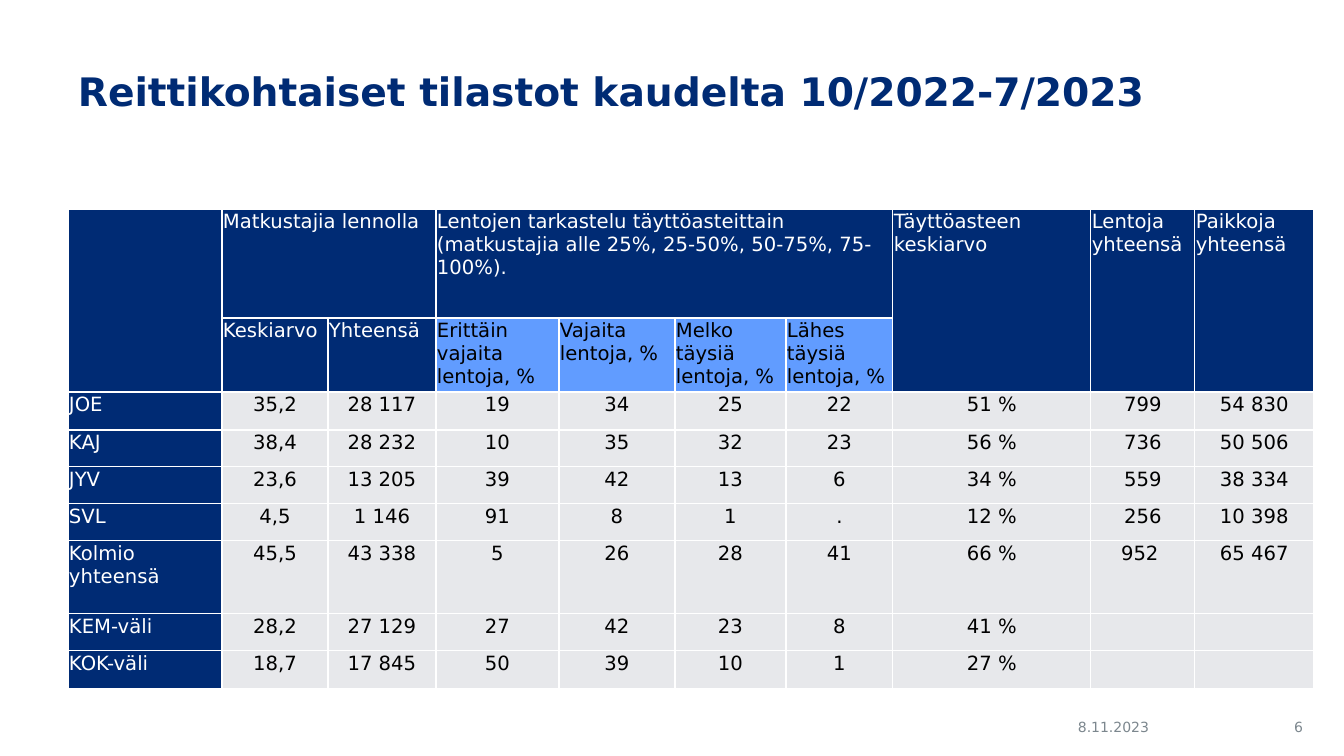
import dataclasses
import typing

import lxml.etree
import pptx
import pptx.dml.color
import pptx.enum.text
import pptx.oxml.ns
import pptx.util

ALIGN = pptx.enum.text.PP_ALIGN
ANCHOR = pptx.enum.text.MSO_ANCHOR
SCALE = 914400 / 100.8


def px(n):
    return pptx.util.Emu(round(n * SCALE))


@dataclasses.dataclass
class Theme:
    font: str = "DejaVu Sans"
    navy: str = "002B74"
    blue: str = "619CFF"
    pale: str = "E7E8EB"
    white: str = "FFFFFF"
    black: str = "000000"
    grey: str = "7C878E"
    head: int = 28
    body: int = 14
    small: int = 10


@dataclasses.dataclass
class Deck:
    theme: Theme
    slide: typing.Any

    def add_text(self, para, text, size, color, bold=False, align=ALIGN.LEFT):
        para.alignment = align
        run = para.add_run()
        run.text = text
        font = run.font
        font.name, font.size, font.bold = self.theme.font, pptx.util.Pt(size), bold
        font.color.rgb = pptx.dml.color.RGBColor.from_string(color)

    def label(self, box, text, size, color, bold=False, align=ALIGN.LEFT,
              anchor=ANCHOR.MIDDLE, space=1.0):
        frame = self.slide.shapes.add_textbox(*map(px, box)).text_frame
        frame.word_wrap = True
        frame.vertical_anchor = anchor
        para = frame.paragraphs[0]
        para.line_spacing = space
        self.add_text(para, text, size, color, bold, align)

    def border(self, cell):
        props = cell._tc.get_or_add_tcPr()
        for side in ("a:lnL", "a:lnR", "a:lnT", "a:lnB"):
            line = lxml.etree.SubElement(props, pptx.oxml.ns.qn(side), w="12700")
            fill = lxml.etree.SubElement(line, pptx.oxml.ns.qn("a:solidFill"))
            lxml.etree.SubElement(fill, pptx.oxml.ns.qn("a:srgbClr"), val=self.theme.white)

    def cell(self, cell, text, fill, color, align):
        cell.margin_left = cell.margin_right = cell.margin_top = px(1)
        cell.margin_bottom = 0
        self.border(cell)
        cell.fill.solid()
        cell.fill.fore_color.rgb = pptx.dml.color.RGBColor.from_string(fill)
        frame = cell.text_frame
        for i, part in enumerate(text.split("\n") if text else []):
            para = frame.add_paragraph() if i else frame.paragraphs[0]
            self.add_text(para, part, self.theme.body, color, align=align)

    def table(self, left, top, cols, rows, data, spans, look):
        grid = self.slide.shapes.add_table(
            len(rows), len(cols), px(left), px(top), px(sum(cols)), px(sum(rows))).table
        for col, width in zip(grid.columns, cols):
            col.width = px(width)
        for row, height in zip(grid.rows, rows):
            row.height = px(height)
        for r, line in enumerate(data):
            for c, text in enumerate(line):
                self.cell(grid.cell(r, c), text, *look(r, c))
        for first, last in spans:
            grid.cell(*first).merge(grid.cell(*last))


show = pptx.Presentation()
show.slide_width, show.slide_height = px(1344), px(756)
theme = Theme()
deck = Deck(theme, show.slides.add_slide(show.slide_layouts[6]))

# Title
deck.label((68, 68, 1184, 122), "Reittikohtaiset tilastot kaudelta 10/2022-7/2023",
           theme.head, theme.navy, bold=True, anchor=ANCHOR.TOP, space=0.9)

# Date and page number
deck.label((1010, 713, 207, 28), "8.11.2023", theme.small, theme.grey, align=ALIGN.CENTER)
deck.label((1246, 713, 67, 28), "6", theme.small, theme.grey, align=ALIGN.RIGHT)

# Route statistics
HEADS = [
    ["", "Matkustajia lennolla", "",
     "Lentojen tarkastelu täyttöasteittain\n(matkustajia alle 25%, 25-50%, 50-75%, 75-100%).",
     "", "", "", "Täyttöasteen keskiarvo", "Lentoja yhteensä", "Paikkoja yhteensä"],
    ["", "Keskiarvo", "Yhteensä", "Erittäin vajaita lentoja, %", "Vajaita lentoja, %",
     "Melko täysiä lentoja, %", "Lähes täysiä lentoja, %", "", "", ""],
]
ROUTES = """\
JOE|35,2|28 117|19|34|25|22|51 %|799|54 830
KAJ|38,4|28 232|10|35|32|23|56 %|736|50 506
JYV|23,6|13 205|39|42|13|6|34 %|559|38 334
SVL|4,5|1 146|91|8|1|.|12 %|256|10 398
Kolmio yhteensä|45,5|43 338|5|26|28|41|66 %|952 |65 467
KEM-väli|28,2|27 129|27|42|23|8|41 %||
KOK-väli|18,7|17 845|50|39|10|1|27 %||"""
SPANS = [((0, 1), (0, 2)), ((0, 3), (0, 6))] + [((0, c), (1, c)) for c in (0, 7, 8, 9)]


def look(r, c):
    if r == 1 and 3 <= c <= 6:
        return theme.blue, theme.black, ALIGN.LEFT
    if r < 2 or c == 0:
        return theme.navy, theme.white, ALIGN.LEFT
    return theme.pale, theme.black, ALIGN.CENTER


deck.table(68, 209,
           [154, 106, 108, 123, 116, 111, 107, 198, 104, 119],
           [109, 74, 38, 37, 37, 37, 73, 37, 38],
           HEADS + [line.split("|") for line in ROUTES.splitlines()], SPANS, look)

show.save("out.pptx")
